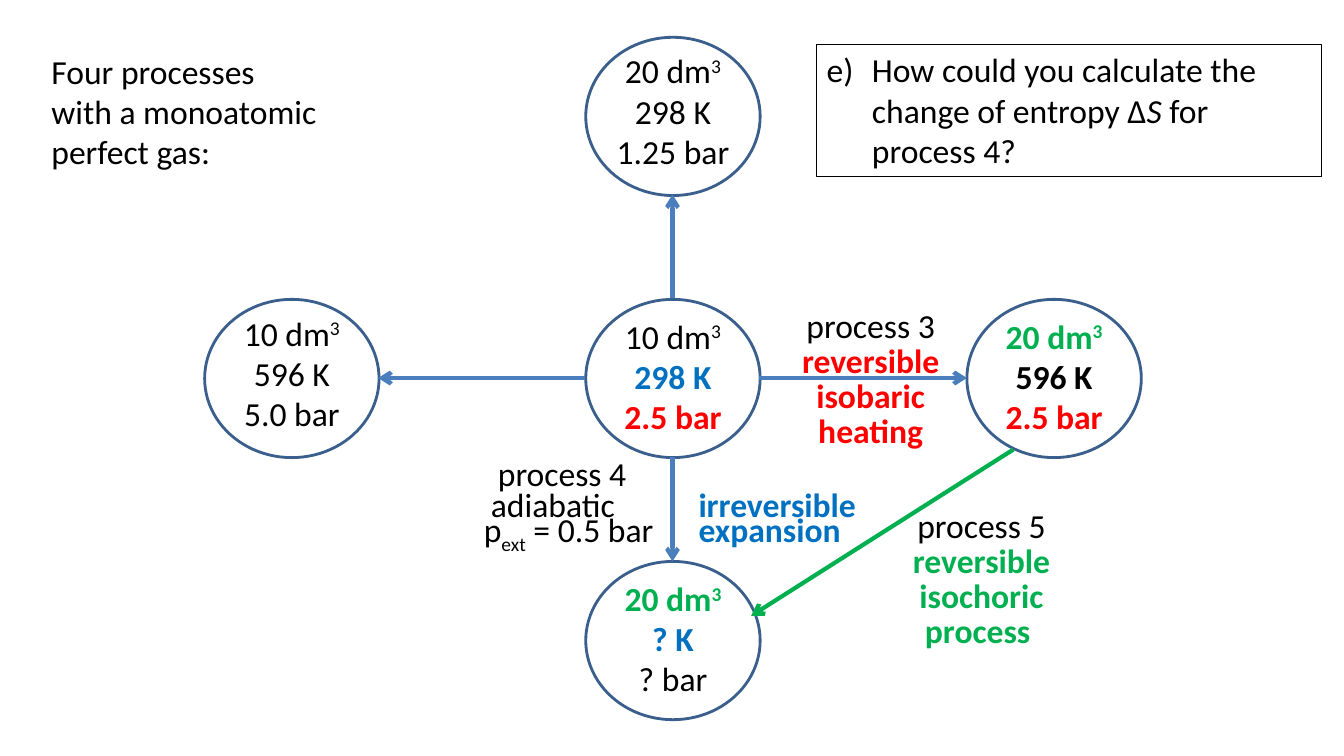
"""Build the slide on four processes with a monoatomic perfect gas."""
from dataclasses import dataclass

from lxml import etree
from pptx import Presentation, util as u
from pptx.dml.color import RGBColor
from pptx.enum import shapes, text
from pptx.oxml.ns import qn

PX = 9144
BLACK = RGBColor(0x00, 0x00, 0x00)
RED = RGBColor(0xFF, 0x00, 0x00)
GREEN = RGBColor(0x00, 0xB0, 0x50)
BLUE = RGBColor(0x00, 0x70, 0xC0)
OUTLINE = RGBColor(0x3A, 0x5F, 0x8C)
ARROW = RGBColor(0x4B, 0x7E, 0xBC)

CENTER_X, CENTER_Y = 667, 375
STEP_X, STEP_Y = 378, 260
STATE_W, STATE_H = 173, 157
VALUES_W, VALUES_H = 157, 131
LEFT, CENTER = text.PP_ALIGN.LEFT, text.PP_ALIGN.CENTER


@dataclass(frozen=True)
class Span:
    words: str
    color: RGBColor = BLACK
    bold: bool = False
    italic: bool = False
    baseline: int = 0


@dataclass(frozen=True)
class State:
    column: int
    row: int
    volume: Span
    temperature: Span
    pressure: Span
    text_top: int


@dataclass(frozen=True)
class Arrow:
    start: tuple[int, int]
    end: tuple[int, int]
    color: RGBColor = ARROW


@dataclass(frozen=True)
class Label:
    left: int
    top: int
    width: int
    height: int
    lines: list[list[Span]]
    spacing: int
    align: text.PP_ALIGN = CENTER
    tabs: tuple[int, ...] = ()


STATES = [
    State(0, 0, Span("10 dm"), Span("298 K", BLUE, True), Span("2.5 bar", RED, True), 11),
    State(1, 0, Span("20 dm", GREEN, True), Span("596 K", BLACK, True),
          Span("2.5 bar", RED, True), 11),
    State(0, -1, Span("20 dm"), Span("298 K"), Span("1.25 bar"), 8),
    State(-1, 0, Span("10 dm"), Span("596 K"), Span("5.0 bar"), 8),
    State(0, 1, Span("20 dm", GREEN, True), Span("? K", BLUE, True), Span("? bar"), 11),
]

DIRECTIONS = [(1, 0), (0, -1), (-1, 0), (0, 1)]

LABELS = [
    Label(769, 303, 189, 150, [
        [Span("process 3")],
        [Span("reversible", RED, True)],
        [Span("isobaric heating", RED, True)],
    ], 25),
    Label(447, 454, 417, 103, [
        [Span("\t\t\tprocess 4")],
        [Span("\t\tadiabatic\t"), Span("irreversible", BLUE, True)],
        [Span("\tp"), Span("ext", baseline=-25000), Span(" = 0.5 bar\t"),
         Span("expansion", BLUE, True)],
    ], 22, LEFT, (23, 30, 37, 236)),
    Label(887, 501, 173, 150, [
        [Span("process 5")],
        [Span("reversible", GREEN, True)],
        [Span("isochoric", GREEN, True)],
        [Span("process ", GREEN, True)],
    ], 25),
]

TITLE = [[Span("Four processes \nwith a monoatomic")], [Span("perfect gas:")]]
QUESTION = [[Span("e)\tHow could you calculate the\nchange of entropy Δ"),
             Span("S ", italic=True), Span("for\nprocess 4?")]]


def place(shape, left: int, top: int, width: int, height: int) -> None:
    shape.left, shape.top = left * PX, top * PX
    shape.width, shape.height = width * PX, height * PX


def write(shape, lines: list[list[Span]], align: text.PP_ALIGN = LEFT,
          spacing: int | None = None) -> None:
    frame = shape.text_frame
    frame.word_wrap = True
    frame.auto_size = text.MSO_AUTO_SIZE.SHAPE_TO_FIT_TEXT
    frame.vertical_anchor = text.MSO_ANCHOR.TOP
    for index, line in enumerate(lines):
        para = frame.add_paragraph() if index else frame.paragraphs[0]
        para.alignment = align
        para.line_spacing = u.Pt(spacing) if spacing else 1.0
        para.font.name = "Calibri"
        para.font.size = u.Pt(24)
        for piece in line:
            for number, words in enumerate(piece.words.split("\n")):
                if number:
                    para.add_line_break()
                span = para.add_run()
                span.text = words
                span.font.color.rgb = piece.color
                span.font.bold = piece.bold
                span.font.italic = piece.italic
                if piece.baseline:
                    span.font._element.set("baseline", str(piece.baseline))


def set_tabs(para, stops: tuple[int, ...]) -> None:
    props = para._p.get_or_add_pPr()
    tabs = etree.Element(qn("a:tabLst"))
    for stop in stops:
        etree.SubElement(tabs, qn("a:tab"), pos=str(stop * PX), algn="l")
    props.find(qn("a:defRPr")).addprevious(tabs)


def draw_state(page, state: State) -> None:
    left = CENTER_X + state.column * STEP_X - STATE_W // 2
    top = CENTER_Y + state.row * STEP_Y - STATE_H // 2
    group = page.shapes.add_group_shape()
    circle = group.shapes.add_shape(shapes.MSO_SHAPE.OVAL, left * PX, top * PX,
                                    STATE_W * PX, STATE_H * PX)
    circle.shadow.inherit = False
    circle.fill.background()
    circle.line.color.rgb = OUTLINE
    circle.line.width = u.Pt(2)
    box = group.shapes.add_textbox((left + 8) * PX, (top + state.text_top) * PX,
                                   VALUES_W * PX, VALUES_H * PX)
    cube = Span("3", state.volume.color, state.volume.bold, baseline=30000)
    write(box, [[state.volume, cube], [state.temperature], [state.pressure]], CENTER)


def draw_arrow(page, arrow: Arrow) -> None:
    ends = [value * PX for value in arrow.start + arrow.end]
    link = page.shapes.add_connector(shapes.MSO_CONNECTOR.STRAIGHT, *ends)
    link.line.color.rgb = arrow.color
    link.line.width = u.Pt(3)
    etree.SubElement(link.line._get_or_add_ln(), qn("a:tailEnd"), type="arrow")
    etree.SubElement(link._element.spPr, qn("a:effectLst"))


def draw_label(page, label: Label) -> None:
    box = page.shapes.add_textbox(label.left * PX, label.top * PX,
                                  label.width * PX, label.height * PX)
    write(box, label.lines, label.align, label.spacing)
    if label.tabs:
        for para in box.text_frame.paragraphs:
            set_tabs(para, label.tabs)


def draw_question(page) -> None:
    box = page.shapes.add_textbox(810 * PX, 44 * PX, 501 * PX, 131 * PX)
    box.line.color.rgb = BLACK
    box.line.width = u.Pt(0.75)
    write(box, QUESTION)
    props = box.text_frame.paragraphs[0]._p.get_or_add_pPr()
    props.set("marL", str(45 * PX))
    props.set("indent", str(-45 * PX))


def radial_arrow(across: int, down: int) -> Arrow:
    start = (CENTER_X + across * STATE_W // 2, CENTER_Y + down * STATE_H // 2)
    end = (CENTER_X + across * (STEP_X - STATE_W // 2),
           CENTER_Y + down * (STEP_Y - STATE_H // 2))
    return Arrow(start, end)


def main() -> None:
    deck = Presentation()
    deck.slide_width, deck.slide_height = 1333 * PX, 750 * PX
    page = deck.slides.add_slide(deck.slide_layouts[5])
    place(page.shapes.title, 41, 45, 343, 131)
    write(page.shapes.title, TITLE)
    for state in STATES:
        draw_state(page, state)
    for across, down in DIRECTIONS:
        draw_arrow(page, radial_arrow(across, down))
    draw_arrow(page, Arrow((1005, 446), (745, 611), GREEN))
    for label in LABELS:
        draw_label(page, label)
    draw_question(page)
    deck.save("out.pptx")


if __name__ == "__main__":
    main()
